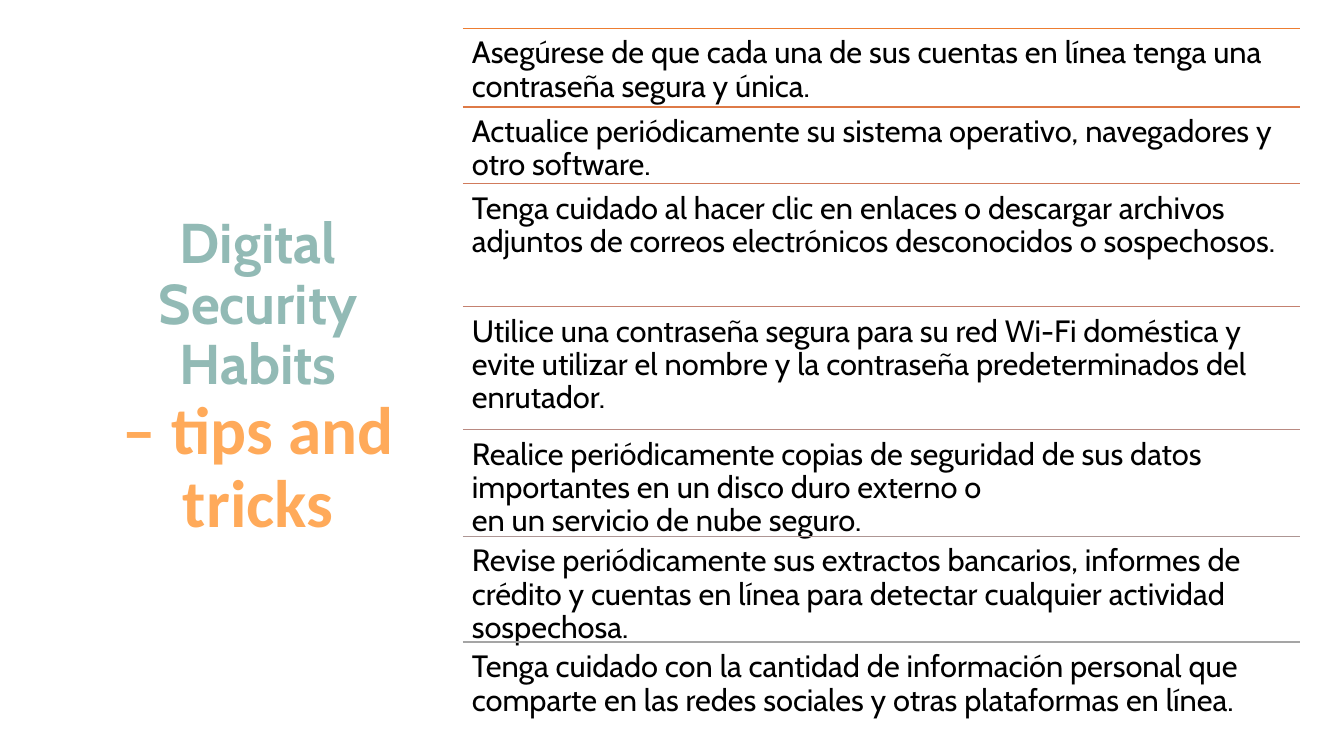
from itertools import accumulate

from lxml.etree import SubElement
from pptx import Presentation
from pptx.dml.color import RGBColor
from pptx.enum.shapes import MSO_CONNECTOR
from pptx.enum.text import MSO_ANCHOR, MSO_AUTO_SIZE, PP_ALIGN
from pptx.oxml.ns import qn
from pptx.util import Inches, Pt

COLORS = {"title": "92BAB5", "subtitle": "FFAA5A", "text": "000000"}
LEFT, TOP, WIDTH = 4.59, 0.28, 8.3

# Row height, rule colour, lines of text
TIPS = [
    (0.78, "ED7D31", ["Asegúrese de que cada una de sus cuentas en línea tenga una contraseña segura y única."]),
    (0.76, "DE7A47", ["Actualice periódicamente su sistema operativo, navegadores y otro software."]),
    (1.22, "D17B5C", ["Tenga cuidado al hacer clic en enlaces o descargar archivos adjuntos de correos "
                      "electrónicos desconocidos o sospechosos."]),
    (1.22, "C48170", ["Utilice una contraseña segura para su red Wi-Fi doméstica y evite utilizar el nombre "
                      "y la contraseña predeterminados del enrutador."]),
    (1.06, "B98A82", ["Realice periódicamente copias de seguridad de sus datos importantes en un disco duro externo o ",
                      "en un servicio de nube seguro."]),
    (1.05, "AE9694", ["Revise periódicamente sus extractos bancarios, informes de crédito y cuentas en línea "
                      "para detectar cualquier actividad sospechosa."]),
    (0.85, "A5A5A5", ["Tenga cuidado con la cantidad de información personal que comparte en las redes "
                      "sociales y otras plataformas en línea."]),
]


def add_run(paragraph, text, size, font, color, bold=False):
    run = paragraph.add_run()
    run.text = text
    run.font.size = Pt(size)
    run.font.name = font
    run.font.bold = bold
    run.font.color.rgb = RGBColor.from_string(color)


presentation = Presentation()
presentation.slide_width, presentation.slide_height = Inches(13.33), Inches(7.5)
slide = presentation.slides.add_slide(presentation.slide_layouts[5])

title = slide.shapes.title
title.left, title.top, title.width, title.height = map(Inches, (0.69, 0.7, 3.74, 6.11))
title.text_frame.word_wrap = True
title.text_frame.auto_size = MSO_AUTO_SIZE.NONE
title.text_frame.vertical_anchor = MSO_ANCHOR.MIDDLE
paragraph = title.text_frame.paragraphs[0]
paragraph.alignment = PP_ALIGN.CENTER
paragraph.line_spacing = 0.9
add_run(paragraph, "Digital Security Habits", 40, "Cabin", COLORS["title"], bold=True)
paragraph.add_line_break()
add_run(paragraph, "– tips and tricks", 48, "Calibri", COLORS["subtitle"], bold=True)

row_tops = accumulate((height for height, _, _ in TIPS), initial=TOP)
for top, (height, color, lines) in zip(row_tops, TIPS):
    rule = slide.shapes.add_connector(
        MSO_CONNECTOR.STRAIGHT, Inches(LEFT), Inches(top), Inches(LEFT + WIDTH), Inches(top))
    rule.line.color.rgb = RGBColor.from_string(color)
    rule.line.width = Pt(1)
    SubElement(rule.element.spPr, qn("a:effectLst"))

    tip = slide.shapes.add_textbox(Inches(LEFT), Inches(top), Inches(WIDTH), Inches(height))
    frame = tip.text_frame
    frame.word_wrap = True
    frame.margin_left = frame.margin_top = frame.margin_right = frame.margin_bottom = Inches(0.09)
    paragraph = frame.paragraphs[0]
    paragraph.line_spacing = 0.9
    for number, line in enumerate(lines):
        if number:
            paragraph.add_line_break()
        add_run(paragraph, line, 22, "Cabin", COLORS["text"])

presentation.save("out.pptx")
